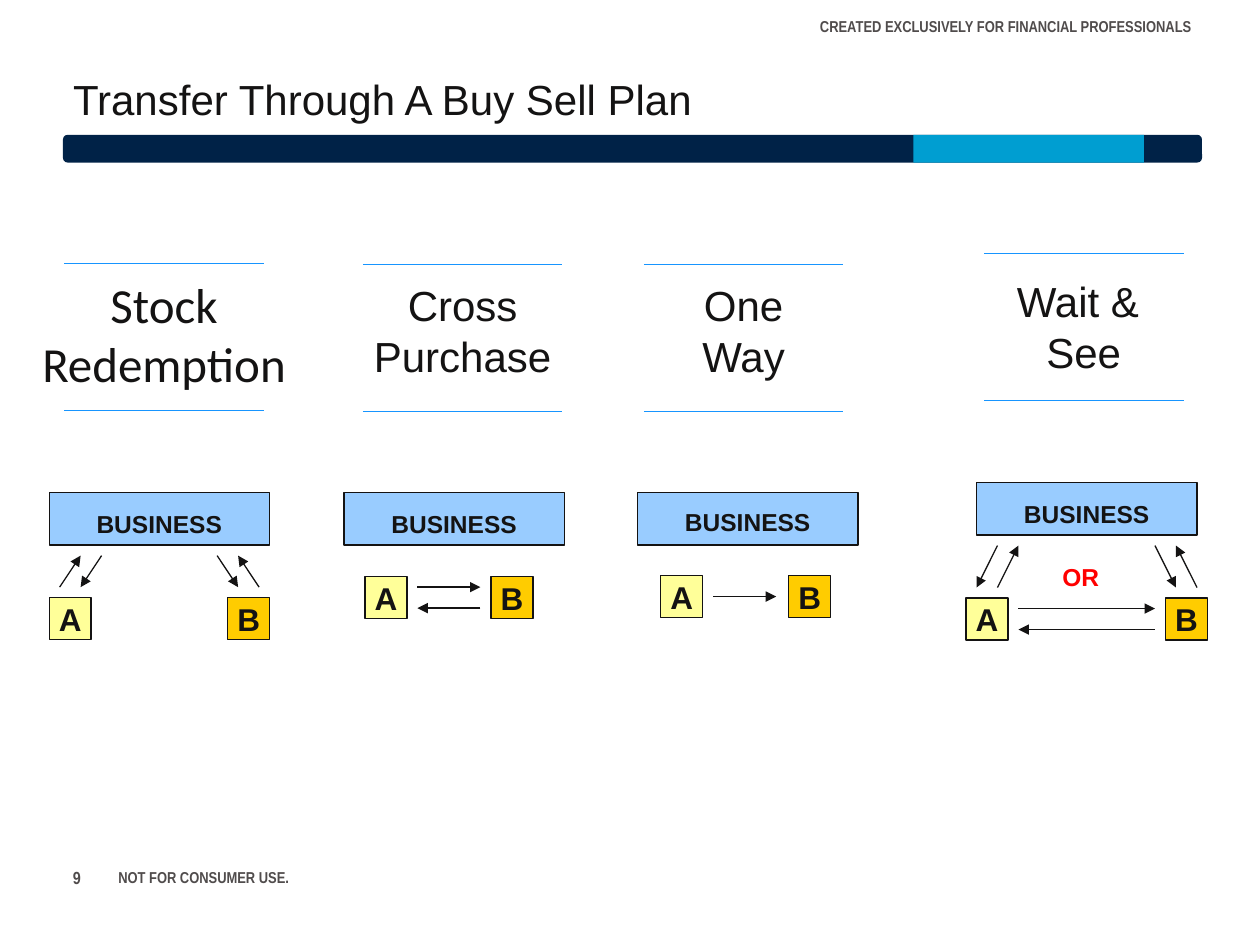
from lxml.etree import SubElement
from pptx import Presentation
from pptx.dml.color import RGBColor
from pptx.enum.shapes import MSO_CONNECTOR, MSO_SHAPE
from pptx.enum.text import MSO_ANCHOR, MSO_AUTO_SIZE, PP_ALIGN
from pptx.oxml.ns import qn
from pptx.util import Inches, Pt

COLORS = {
    "ink": "141313", "muted": "504C4C", "navy": "002247", "cyan": "009ED1",
    "rule": "1795FF", "business": "99CCFF", "A": "FFFF99", "B": "FFCC00",
    "or": "FF0000",
}
UNIT = 1 / 12
RULE_WIDTH, RULE_GAP = 19 * UNIT, 14 * UNIT

TITLE = "Transfer Through A Buy Sell Plan"
MARGIN_NOTES = [
    ("CREATED EXCLUSIVELY FOR FINANCIAL PROFESSIONALS", (6.41, 0.02, 3.57, 0.38), 9),
    ("9", (0.48, 6.73, 0.41, 0.47), 10),
    ("NOT FOR CONSUMER USE.", (0.84, 6.73, 4.09, 0.47), 9),
]
BANDS = [
    (MSO_SHAPE.ROUNDED_RECTANGLE, (0.5, 1.07, 9.04, 0.22), "navy"),
    (MSO_SHAPE.RECTANGLE, (7.25, 1.07, 1.83, 0.22), "cyan"),
]

# Owner and arrow positions are in grid units from the business box corner.
PLANS = [
    {"heading": "Stock\nRedemption", "font": "Calibri", "size": 28,
     "heading_size": (2.21, 1.04), "heading_drop": 0.04,
     "rule": (0.51, 2.09), "corner": (0.39, 3.91), "label_drop": 1,
     "owners": {"A": (0, 10), "B": (17, 10)},
     "arrows": [(1, 9, 3, 6), (5, 6, 3, 9), (20, 9, 18, 6), (16, 6, 18, 9)]},
    {"heading": "Cross\nPurchase", "font": "Arial", "size": 24,
     "heading_size": (1.63, 0.91), "heading_drop": 0.07,
     "rule": (2.88, 2.1), "corner": (2.73, 3.91), "label_drop": 1,
     "owners": {"A": (2, 8), "B": (14, 8)},
     "arrows": [(7, 9, 13, 9), (13, 11, 7, 11)]},
    {"heading": "One\nWay", "font": "Arial", "size": 24,
     "heading_size": (0.86, 0.91), "heading_drop": 0.07,
     "rule": (5.11, 2.1), "corner": (5.06, 3.91), "label_drop": 0.75,
     "owners": {"A": (2.2, 7.9), "B": (14.4, 7.9)},
     "arrows": [(7.2, 9.9, 13.2, 9.9)]},
    {"heading": "Wait & \nSee", "font": "Arial", "size": 24,
     "heading_size": (1.27, 0.91), "heading_drop": 0.13,
     "rule": (7.81, 2.01), "corner": (7.75, 3.83), "label_drop": 1,
     "owners": {"A": (-1, 11), "B": (18, 11)},
     "arrows": [(4, 12, 17, 12), (17, 14, 4, 14), (2, 10, 4, 6),
                (2, 6, 0, 10), (17, 6, 19, 10), (21, 10, 19, 6)],
     "choice": ("OR", (7, 7, 6, 4))},
]


def color(name):
    return RGBColor.from_string(COLORS[name])


def place(area):
    return [Inches(length) for length in area]


def write(holder, text, size, font="Arial", ink="ink", bold=False,
          align=PP_ALIGN.LEFT, anchor=MSO_ANCHOR.TOP, wrap=True, grow=False):
    frame = holder.text_frame
    frame.text = text
    frame.word_wrap = wrap
    frame.auto_size = MSO_AUTO_SIZE.SHAPE_TO_FIT_TEXT if grow else MSO_AUTO_SIZE.NONE
    frame.vertical_anchor = anchor
    frame.margin_left = frame.margin_right = Inches(0.1)
    frame.margin_top = frame.margin_bottom = Inches(0.05)
    for paragraph in frame.paragraphs:
        paragraph.alignment = align
        paragraph.font.size = Pt(size)
        paragraph.font.name = font
        paragraph.font.bold = bold
        paragraph.font.color.rgb = color(ink)


def add_block(slide, preset, area, fill, outlined=True):
    block = slide.shapes.add_shape(preset, *place(area))
    block.shadow.inherit = False
    block.fill.solid()
    block.fill.fore_color.rgb = color(fill)
    if outlined:
        block.line.color.rgb = color("ink")
        block.line.width = Pt(0.75)
    else:
        block.line.fill.background()
    return block


def add_line(slide, ends, ink, arrow=False):
    line = slide.shapes.add_connector(MSO_CONNECTOR.STRAIGHT, *place(ends))
    line.line.color.rgb = color(ink)
    line.line.width = Pt(0.75)
    if arrow:
        SubElement(line.line._get_or_add_ln(), qn("a:tailEnd"), type="triangle")
    SubElement(line._element.spPr, qn("a:effectLst"))


def add_plan(slide, plan):
    x, y = plan["corner"]

    def area(column, row, width, height):
        return x + column * UNIT, y + row * UNIT, width * UNIT, height * UNIT

    left, top = plan["rule"]
    for rule_y in (top, top + RULE_GAP):
        add_line(slide, (left, rule_y, left + RULE_WIDTH, rule_y), "rule")
    width, height = plan["heading_size"]
    heading = slide.shapes.add_textbox(*place(
        (left + (RULE_WIDTH - width) / 2, top + plan["heading_drop"], width, height)))
    write(heading, plan["heading"], plan["size"], font=plan["font"],
          align=PP_ALIGN.CENTER, wrap=False, grow=True)

    add_block(slide, MSO_SHAPE.RECTANGLE, area(0, 0, 21, 5), "business")
    label = slide.shapes.add_textbox(*place(area(1, plan["label_drop"], 19, 4)))
    write(label, "BUSINESS", 14, bold=True, align=PP_ALIGN.CENTER, grow=True)

    for owner, (column, row) in plan["owners"].items():
        box = add_block(slide, MSO_SHAPE.RECTANGLE, area(column, row, 4, 4), owner)
        write(box, owner, 18, bold=True, align=PP_ALIGN.CENTER,
              anchor=MSO_ANCHOR.MIDDLE, wrap=False)
    for x1, y1, x2, y2 in plan["arrows"]:
        ends = (x + x1 * UNIT, y + y1 * UNIT, x + x2 * UNIT, y + y2 * UNIT)
        add_line(slide, ends, "ink", arrow=True)
    if "choice" in plan:
        word, cells = plan["choice"]
        choice = slide.shapes.add_textbox(*place(area(*cells)))
        write(choice, word, 14, ink="or", bold=True, grow=True)


def main():
    deck = Presentation()
    deck.slide_width, deck.slide_height = Inches(10), Inches(7.5)
    slide = deck.slides.add_slide(deck.slide_layouts[5])

    title = slide.shapes.title
    title.left, title.top, title.width, title.height = place((0.48, 0.53, 5.16, 0.5))
    write(title, TITLE, 24, wrap=False, grow=True)

    for text, area, size in MARGIN_NOTES:
        note = slide.shapes.add_textbox(*place(area))
        write(note, text, size, font="Arial Narrow", ink="muted", bold=True,
              anchor=MSO_ANCHOR.MIDDLE)
    for preset, area, fill in BANDS:
        add_block(slide, preset, area, fill, outlined=False)
    for plan in PLANS:
        add_plan(slide, plan)

    deck.save("out.pptx")


if __name__ == "__main__":
    main()
